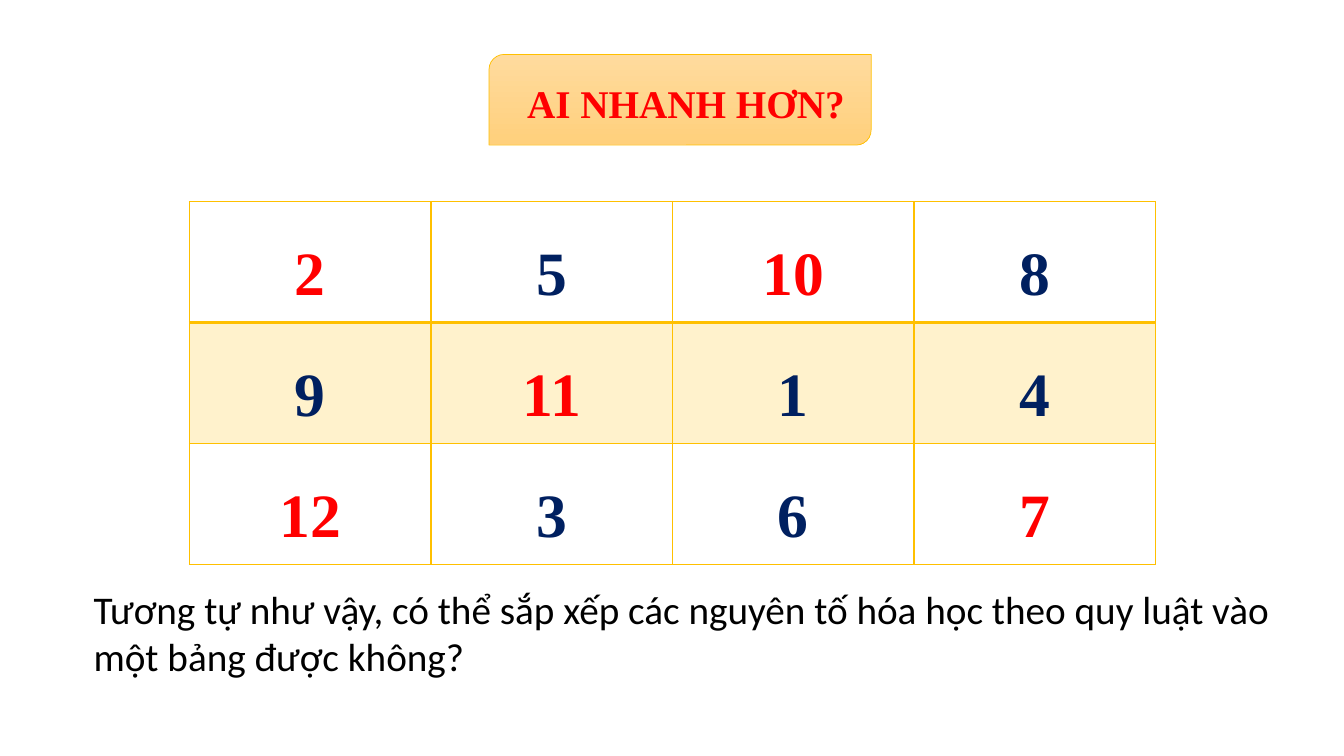
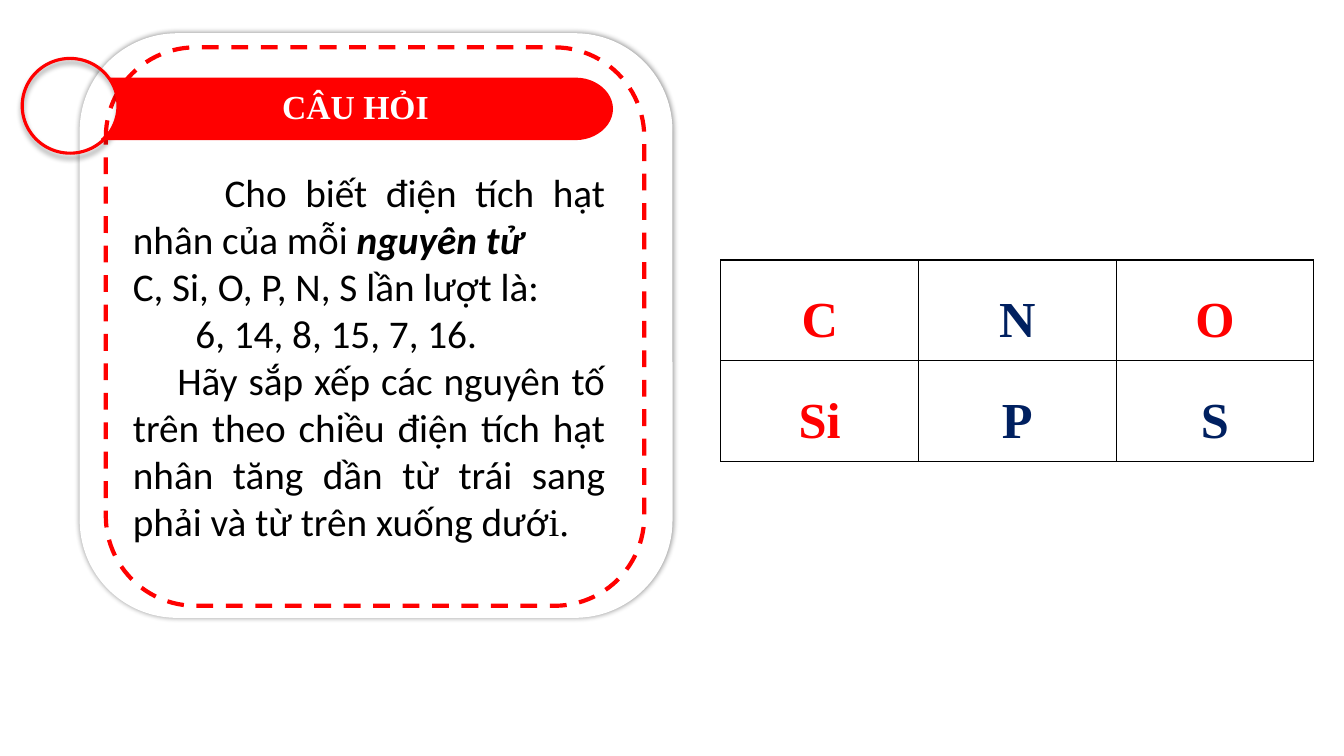
"""Build two chemistry lesson slides: a number race and a question on ordering elements."""
from dataclasses import dataclass

from lxml.etree import SubElement
from pptx import Presentation
from pptx.dml.color import RGBColor as Rgb
from pptx.enum.dml import MSO_LINE_DASH_STYLE as Dash
from pptx.enum.shapes import MSO_SHAPE as Shape
from pptx.enum.text import MSO_ANCHOR as Anchor, PP_ALIGN as Align
from pptx.oxml.ns import qn
from pptx.util import Emu, Pt

PX = 9144


def px(*lengths):
    return [Emu(round(length * PX)) for length in lengths]


def curve(start, first, second, end, steps=12):
    points = []
    for step in range(1, steps + 1):
        t = step / steps
        weights = ((1 - t) ** 3, 3 * t * (1 - t) ** 2, 3 * t * t * (1 - t), t ** 3)
        corners = (start, first, second, end)
        points.append(tuple(sum(w * c[axis] for w, c in zip(weights, corners)) for axis in (0, 1)))
    return points


@dataclass(frozen=True)
class Theme:
    red: str = "FF0000"
    navy: str = "002060"
    gold: str = "FFC000"
    cream: str = "FFF2CC"
    peach: str = "FFDB9E"
    amber: str = "FFD07C"
    black: str = "000000"
    white: str = "FFFFFF"
    serif: str = "Times New Roman"
    sans: str = "Calibri"
    body: int = 28
    banner: int = 24
    number: int = 44
    element: int = 36

    def text(self, size, color, name, bold=False, italic=False):
        return {"size": Pt(size), "color": color, "name": name, "bold": bold, "italic": italic}


class Lesson:
    def __init__(self, theme):
        self.theme = theme
        self.deck = Presentation()
        self.deck.slide_width, self.deck.slide_height = px(1333, 750)
        self.page = None

    def add_page(self):
        self.page = self.deck.slides.add_slide(self.deck.slide_layouts[6])

    def fill_para(self, para, spans, **layout):
        for key, value in layout.items():
            setattr(para, key, value)
        for text, style in spans:
            span = para.add_run()
            span.text = text
            for key, value in style.items():
                if key == "color":
                    span.font.color.rgb = Rgb.from_string(value)
                else:
                    setattr(span.font, key, value)

    def paint(self, box, fill=None, line=None, width=1, dash=None):
        box.shadow.inherit = False
        if isinstance(fill, tuple):
            box.fill.gradient()
            box.fill.gradient_angle = 270
            for stop, color in zip(box.fill.gradient_stops, fill):
                stop.color.rgb = Rgb.from_string(color)
        elif fill:
            box.fill.solid()
            box.fill.fore_color.rgb = Rgb.from_string(fill)
        else:
            box.fill.background()
        if line:
            box.line.color.rgb = Rgb.from_string(line)
            box.line.width = Pt(width)
            box.line.dash_style = dash
        else:
            box.line.fill.background()

    def shape(self, kind, place, shadow=None, **look):
        box = self.page.shapes.add_shape(kind, *px(*place))
        self.paint(box, **look)
        if shadow:
            alpha, blur, distance = shadow
            effects = box._element.spPr.find(qn("a:effectLst"))
            outer = SubElement(effects, qn("a:outerShdw"), blurRad=str(Pt(blur)),
                               dist=str(Pt(distance)), dir="5400000", algn="t", rotWithShape="0")
            color = SubElement(outer, qn("a:srgbClr"), val=self.theme.black)
            SubElement(color, qn("a:alpha"), val=str(alpha * 1000))

    def outline(self, points, fill):
        start, *rest = [px(*point) for point in points]
        builder = self.page.shapes.build_freeform(*start, scale=1.0)
        builder.add_line_segments(rest, close=True)
        self.paint(builder.convert_to_shape(), fill)

    def text(self, place, paragraphs, align=Align.LEFT):
        frame = self.page.shapes.add_textbox(*px(*place)).text_frame
        frame.word_wrap = True
        for index, (indent, spans) in enumerate(paragraphs):
            para = frame.add_paragraph() if index else frame.paragraphs[0]
            if indent:
                para._p.get_or_add_pPr().set("indent", str(px(indent)[0]))
            self.fill_para(para, spans, alignment=align)

    def border(self, cell, color, widths):
        props = cell._tc.get_or_add_tcPr()
        for side, width in zip("LRTB", widths):
            line = SubElement(props, qn(f"a:ln{side}"), w=str(Pt(width)))
            SubElement(SubElement(line, qn("a:solidFill")), qn("a:srgbClr"), val=color)

    def table(self, place, rows, reds, size, line, rule=1, shaded=()):
        grid = self.page.shapes.add_table(len(rows), len(rows[0]), *px(*place)).table
        grid.first_row = grid.horz_banding = False
        for r, row in enumerate(rows):
            for c, label in enumerate(row):
                cell = grid.cell(r, c)
                cell.vertical_anchor = Anchor.TOP
                self.border(cell, line, (1, 1, rule if r == 1 else 1, rule if r == 0 else 1))
                if r in shaded:
                    cell.fill.solid()
                    cell.fill.fore_color.rgb = Rgb.from_string(self.theme.cream)
                else:
                    cell.fill.background()
                color = self.theme.red if label in reds else self.theme.navy
                style = self.theme.text(size, color, self.theme.serif, bold=True)
                self.fill_para(cell.text_frame.paragraphs[0], [(label, style)],
                               alignment=Align.CENTER, line_spacing=1.5)


def number_race(lesson):
    theme = lesson.theme
    lesson.add_page()
    lesson.shape(Shape.ROUND_2_DIAG_RECTANGLE, (485, 54, 379, 90),
                 fill=(theme.peach, theme.amber), line=theme.gold, width=0.5)
    title = theme.text(theme.body, theme.red, theme.serif, bold=True)
    lesson.text((513, 74, 363, 57), [(0, [("AI NHANH HƠN?", title)])])
    rows = [("2", "5", "10", "8"), ("9", "11", "1", "4"), ("12", "3", "6", "7")]
    lesson.table((188, 200, 958, 360), rows, {"2", "10", "11", "12", "7"},
                 theme.number, theme.gold, rule=2, shaded={1})
    plain = theme.text(theme.body, theme.black, theme.sans)
    question = "Tương tự như vậy, có thể sắp xếp các nguyên tố hóa học theo quy luật vào một bảng được không?"
    lesson.text((83, 576, 1224, 104), [(0, [(question, plain)])])


def element_question(lesson):
    theme = lesson.theme
    lesson.add_page()
    lesson.shape(Shape.ROUNDED_RECTANGLE, (79, 33, 588, 580), shadow=(43, 4, 0), fill=theme.white)
    lesson.shape(Shape.ROUNDED_RECTANGLE, (105, 47, 534, 554),
                 line=theme.red, width=3, dash=Dash.DASH)
    plain = theme.text(theme.body, theme.black, theme.sans)
    strong = theme.text(theme.body, theme.black, theme.sans, bold=True, italic=True)
    serif = theme.text(theme.body, theme.black, theme.serif)
    task = ("Hãy sắp xếp các nguyên tố trên theo chiều điện tích hạt nhân "
            "tăng dần từ trái sang phải và từ trên xuống dướ")
    lesson.text((122, 162, 488, 387), [
        (91, [("Cho biết điện tích hạt nhân của mỗi ", plain), ("nguyên tử", strong)]),
        (0, [("C, Si, O, P, N, S lần lượt là:", plain)]),
        (62, [("6, 14, 8, 15, 7, 16.", plain)]),
        (44, [(task, plain), ("i.", serif)]),
    ], Align.JUSTIFY)
    lesson.shape(Shape.OVAL, (22, 58, 95, 94), shadow=(40, 4, 3), line=theme.red, width=2.25)
    banner = [(106, 77), (571, 77),
              *curve((571, 77), (591, 77), (608, 91), (608, 108)),
              *curve((608, 108), (608, 125), (591, 139), (571, 139)),
              (101, 139), (100, 138), (101, 137),
              *curve((101, 137), (111, 129), (118, 117), (118, 105)),
              *curve((118, 105), (118, 95), (114, 86), (108, 79))]
    lesson.outline(banner, theme.red)
    heading = theme.text(theme.banner, theme.white, theme.serif, bold=True)
    lesson.text((270, 80, 239, 50), [(0, [("CÂU HỎI", heading)])])
    lesson.table((715, 258, 588, 200), [("C", "N", "O"), ("Si", "P", "S")],
                 {"C", "O", "Si"}, theme.element, theme.black)


def main():
    lesson = Lesson(Theme())
    number_race(lesson)
    element_question(lesson)
    lesson.deck.save("out.pptx")


if __name__ == "__main__":
    main()
